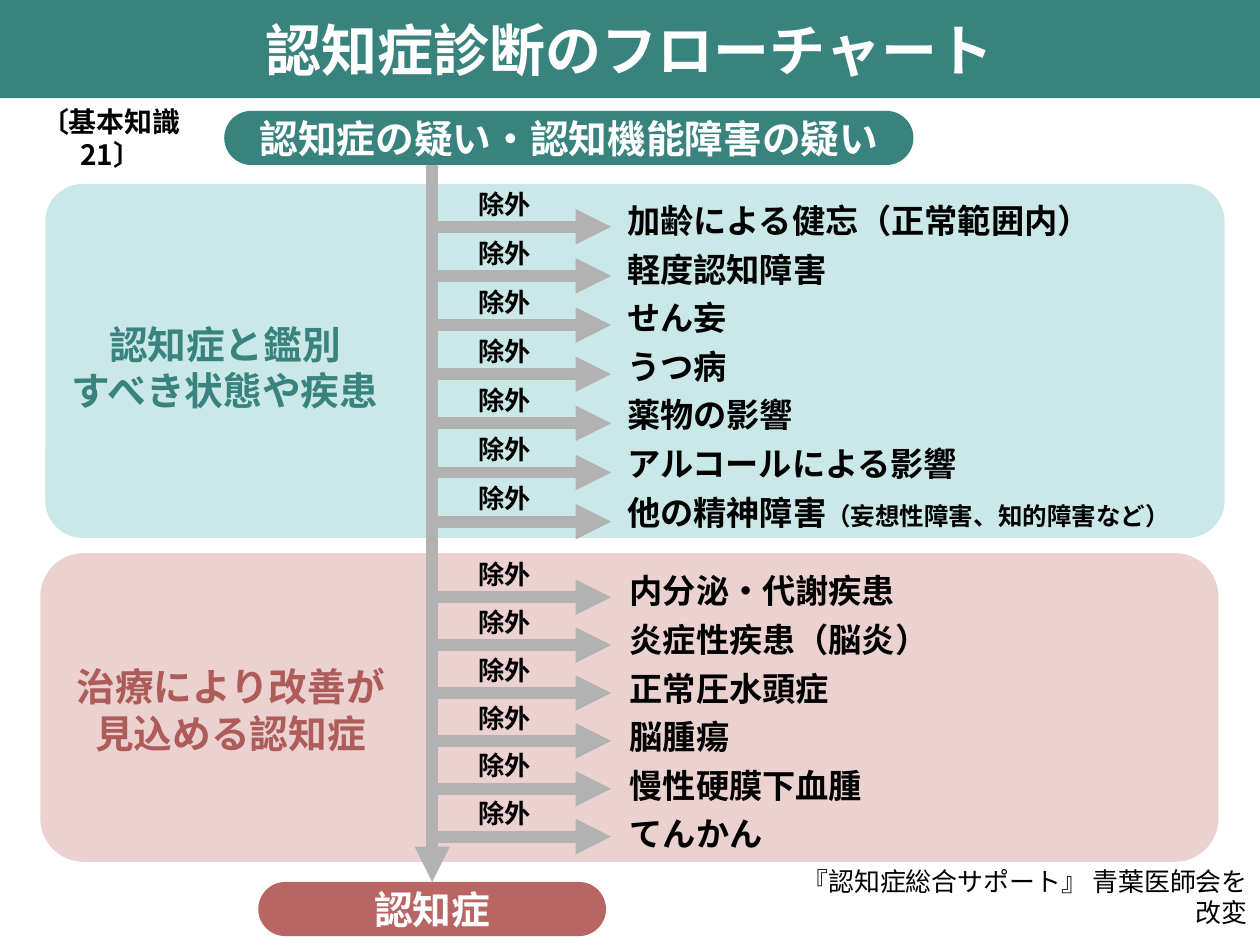
from dataclasses import dataclass

from lxml.etree import SubElement
from pptx import Presentation
from pptx.dml.color import RGBColor as RGB
from pptx.enum.shapes import MSO_CONNECTOR as Conn, MSO_SHAPE as Kind
from pptx.enum.text import MSO_ANCHOR as Anchor, PP_ALIGN as Align
from pptx.oxml.ns import qn
from pptx.util import Inches, Pt


@dataclass(frozen=True)
class Theme:
    font: str = "Noto Sans CJK JP"
    white: RGB = RGB(0xFF, 0xFF, 0xFF)
    black: RGB = RGB(0, 0, 0)
    teal: RGB = RGB(0x39, 0x83, 0x7F)
    mint: RGB = RGB(0xCA, 0xE8, 0xE7)
    rose: RGB = RGB(0xB9, 0x65, 0x63)
    wine: RGB = RGB(0xAE, 0x5C, 0x5A)
    pink: RGB = RGB(0xEB, 0xD2, 0xD1)
    gray: RGB = RGB(0xB2, 0xB2, 0xB2)
    title: float = 32
    head: float = 22.1
    item: float = 19
    ref: float = 16
    label: float = 15
    credit: float = 14.8
    note: float = 14
    stroke: float = 6.75
    lead: float = 1.2


@dataclass(frozen=True)
class Box:
    x: float
    y: float
    w: float
    h: float

    def emu(self) -> tuple:
        return tuple(Inches(v) for v in (self.x, self.y, self.w, self.h))


@dataclass(frozen=True)
class Group:
    panel: Box
    fill: RGB
    round: float
    head: str
    head_box: Box
    ink: RGB
    items: tuple
    list_box: Box
    first: float  # height of the first arrow
    step: float  # gap between arrows


T = Theme()
AXIS = 3.43

GROUPS = (
    Group(Box(0.36, 1.46, 9.36, 2.81), T.mint, 0.106,
          "認知症と鑑別\nすべき状態や疾患", Box(0.29, 2.49, 2.99, 0.85), T.teal,
          ("加齢による健忘（正常範囲内）", "軽度認知障害", "せん妄", "うつ病",
           "薬物の影響", "アルコールによる影響", "他の精神障害"),
          Box(4.88, 1.54, 4.93, 2.76), 1.8, 0.39),
    Group(Box(0.32, 4.39, 9.35, 2.45), T.pink, 0.14,
          "治療により改善が\n見込める認知症", Box(0.12, 5.19, 3.42, 0.88), T.wine,
          ("内分泌・代謝疾患", "炎症性疾患（脳炎）", "正常圧水頭症",
           "脳腫瘍", "慢性硬膜下血腫", "てんかん"),
          Box(4.9, 4.48, 4.93, 2.37), 4.74, 0.38),
)


def style(run, size: float, ink: RGB, bold: bool = True) -> None:
    font = run.font
    font.name, font.size, font.bold = T.font, Pt(size), bold
    font.color.rgb = ink
    SubElement(font._element, qn("a:ea")).set("typeface", T.font)


def write(shape, text: str, size: float, ink: RGB, align=Align.CENTER,
          anchor=Anchor.MIDDLE, bold: bool = True, gap: float = 0):
    frame = shape.text_frame
    frame.text = text
    frame.word_wrap = True
    frame.vertical_anchor = anchor
    for par in frame.paragraphs:
        par.alignment = align
        par.line_spacing = Pt(round(size * T.lead, 1))
        par.space_after = Pt(gap)
        for run in par.runs:
            style(run, size, ink, bold)
    return frame


def label(slide, box: Box, text: str, size: float, ink: RGB, **opts):
    return write(slide.shapes.add_textbox(*box.emu()), text, size, ink, **opts)


def block(slide, kind, box: Box, fill: RGB, bend: float = 0):
    shape = slide.shapes.add_shape(kind, *box.emu())
    shape.shadow.inherit = False
    shape.fill.solid()
    shape.fill.fore_color.rgb = fill
    shape.line.fill.background()
    if bend:
        shape.adjustments[0] = bend
    return shape


def pill(slide, box: Box, fill: RGB, text: str):
    shape = block(slide, Kind.ROUNDED_RECTANGLE, box, fill, 0.5)
    write(shape, text, T.head, T.white)
    return shape


def arrow(slide, x1: float, y1: float, x2: float, y2: float):
    ends = (Inches(v) for v in (x1, y1, x2, y2))
    line = slide.shapes.add_connector(Conn.STRAIGHT, *ends)
    line.line.color.rgb = T.gray
    line.line.width = Pt(T.stroke)
    SubElement(line.line._get_or_add_ln(), qn("a:tailEnd")).set("type", "triangle")
    SubElement(line._element.spPr, qn("a:effectLst"))
    return line


def fill_group(slide, group: Group):
    label(slide, group.head_box, group.head, T.head, group.ink)
    for i in range(len(group.items)):
        y = group.first + i * group.step
        arrow(slide, AXIS, y, 4.85, y)
        label(slide, Box(3.44, y - 0.36, 1.13, 0.35), "除外", T.label, T.black)
    return label(slide, group.list_box, "\n".join(group.items), T.item, T.black,
                 align=Align.LEFT, anchor=Anchor.TOP, gap=5)


def main() -> None:
    deck = Presentation()
    deck.slide_width, deck.slide_height = Inches(10), Inches(7.5)
    slide = deck.slides.add_slide(deck.slide_layouts[6])

    # Title band
    band = block(slide, Kind.RECTANGLE, Box(0, 0, 10, 0.78), T.teal)
    write(band, "認知症診断のフローチャート", T.title, T.white)

    # Panels
    for group in GROUPS:
        block(slide, Kind.ROUNDED_RECTANGLE, group.panel, group.fill, group.round)

    # Main flow, from suspicion to diagnosis
    goal = pill(slide, Box(2.05, 7, 2.76, 0.43), T.rose, "認知症")
    spine = arrow(slide, AXIS, 1.11, AXIS, 7)
    spine.end_connect(goal, 0)
    pill(slide, Box(1.78, 0.88, 5.47, 0.43), T.teal,
         "認知症の疑い・認知機能障害の疑い")

    # Conditions to rule out
    lists = [fill_group(slide, group) for group in GROUPS]
    extra = lists[0].paragraphs[-1].add_run()
    extra.text = "（妄想性障害、知的障害など）"
    style(extra, T.note, T.black)

    # Reference and credit
    label(slide, Box(0, 0.78, 1.76, 0.37), "〔基本知識21〕", T.ref, T.black,
          anchor=Anchor.TOP)
    label(slide, Box(6.13, 7.06, 3.87, 0.35),
          "『認知症総合サポート』 青葉医師会を改変", T.credit, T.black,
          align=Align.RIGHT, anchor=Anchor.BOTTOM, bold=False)

    deck.save("out.pptx")


if __name__ == "__main__":
    main()
